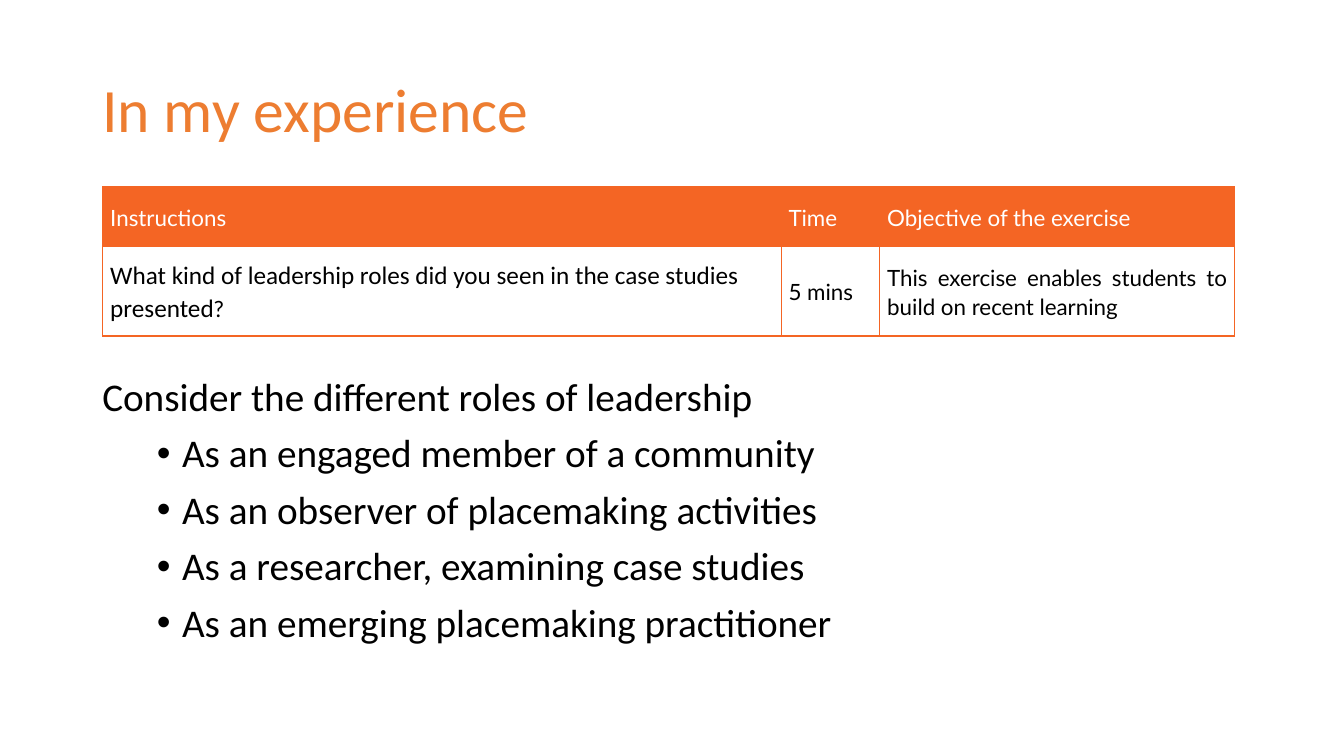
from lxml import etree
from pptx import Presentation
from pptx.dml.color import RGBColor
from pptx.enum.text import MSO_ANCHOR, PP_ALIGN
from pptx.oxml.ns import qn
from pptx.util import Pt

PX = 9525
MIDDLE, TOP = MSO_ANCHOR.MIDDLE, MSO_ANCHOR.TOP
LEFT, JUSTIFY = PP_ALIGN.LEFT, PP_ALIGN.JUSTIFY
ORANGE = "F46524"


def px(length):
    return length * PX


def colour(value):
    return RGBColor.from_string(value)


def write(paragraph, text, font="Calibri", size=28, ink="000000",
          align=LEFT, spacing=0.9, before=0, bullet=None):
    properties = paragraph._p.get_or_add_pPr()
    if bullet:
        properties.set("marL", str(px(76)))
        properties.set("indent", str(px(-24)))
        etree.SubElement(properties, qn("a:buFont"), typeface="Arial")
        etree.SubElement(properties, qn("a:buChar"), char=bullet)
    paragraph.alignment = align
    paragraph.line_spacing = spacing
    paragraph.space_before = Pt(before)
    run = paragraph.add_run()
    run.text = text
    run.font.name = font
    run.font.size = Pt(size)
    run.font.bold = False
    run.font.color.rgb = colour(ink)


class Lesson:
    """Holds the slide and the table style, and adds each kind of element."""

    def __init__(self, slide, accent):
        self.slide = slide
        self.accent = accent

    def text(self, x, y, width, height, lines, anchor=TOP):
        frame = self.slide.shapes.add_textbox(px(x), px(y), px(width), px(height)).text_frame
        frame.word_wrap = True
        frame.vertical_anchor = anchor
        for index, (line, style) in enumerate(lines):
            paragraph = frame.add_paragraph() if index else frame.paragraphs[0]
            write(paragraph, line, **style)

    def borders(self, cell):
        properties = cell._tc.get_or_add_tcPr()
        for side in ("lnL", "lnR", "lnT", "lnB"):
            line = etree.SubElement(properties, qn(f"a:{side}"), w=str(Pt(1)))
            fill = etree.SubElement(line, qn("a:solidFill"))
            etree.SubElement(fill, qn("a:srgbClr"), val=self.accent)

    def table(self, x, y, widths, heights, rows):
        table = self.slide.shapes.add_table(
            len(heights), len(widths), px(x), px(y), px(sum(widths)), px(sum(heights))).table
        table.first_row = table.horz_banding = False
        for column, width in zip(table.columns, widths):
            column.width = px(width)
        for row, height, contents in zip(table.rows, heights, rows):
            row.height = px(height)
            for cell, runs in zip(row.cells, contents):
                cell.vertical_anchor = MIDDLE
                cell.margin_left = cell.margin_right = px(7)
                cell.margin_top = cell.margin_bottom = 0
                self.borders(cell)
                if row is not None and contents is rows[0]:
                    cell.fill.solid()
                    cell.fill.fore_color.rgb = colour(self.accent)
                else:
                    cell.fill.background()
                for text, style in runs:
                    write(cell.text_frame.paragraphs[0], text, spacing=1.07, **style)


def main():
    deck = Presentation()
    deck.slide_width, deck.slide_height = px(1280), px(720)
    lesson = Lesson(deck.slides.add_slide(deck.slide_layouts[6]), ORANGE)

    lesson.text(88, 38, 1104, 139,
                [("In my experience", {"size": 44, "ink": "ED7D31"})], anchor=MIDDLE)

    heading = {"font": "Lato", "size": 16, "ink": "FFFFFF"}
    detail = {"font": "Lato", "size": 16, "align": JUSTIFY}
    headings = [[(title, heading)]
                for title in ("Instructions", "Time", "Objective of the exercise")]
    exercise = [
        [("What kind of leadership roles did you seen in the case studies presented",
          {"size": 18}),
         ("?", {"font": "Lato", "size": 16})],
        [("5 mins", detail)],
        [("This exercise enables students to build on recent learning", detail)],
    ]
    lesson.table(98, 178, (646, 94, 338), (57, 85), [headings, exercise])

    roles = ("As an engaged member of a community",
             "As an observer of placemaking activities",
             "As a researcher, examining case studies",
             "As an emerging placemaking practitioner")
    lesson.text(88, 355, 1104, 294,
                [("Consider the different roles of leadership", {})]
                + [(role, {"before": 10, "bullet": "•"}) for role in roles])

    deck.save("out.pptx")


if __name__ == "__main__":
    main()
